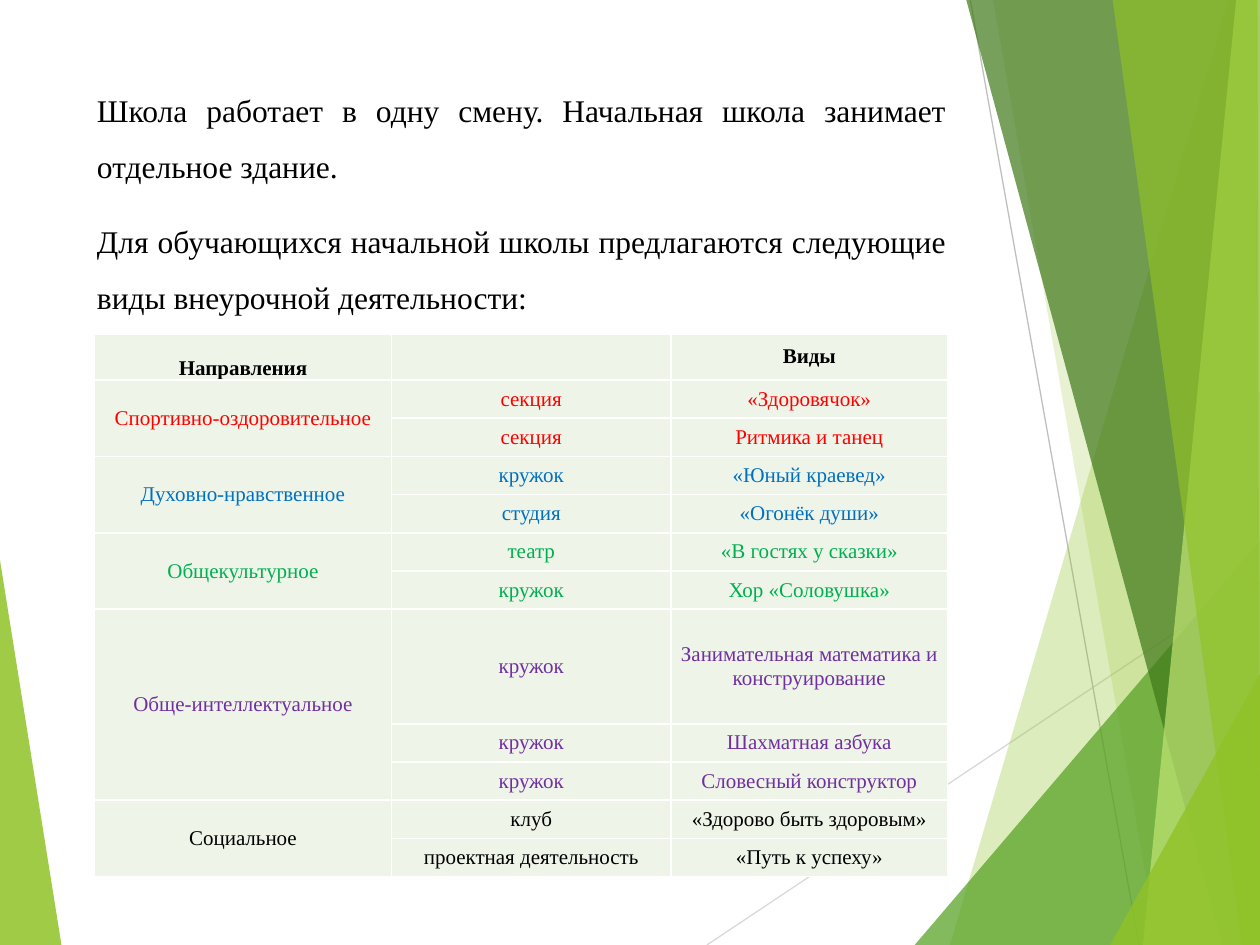
from lxml.etree import SubElement
from pptx import Presentation
from pptx.dml.color import RGBColor
from pptx.enum.shapes import MSO_CONNECTOR
from pptx.enum.text import MSO_ANCHOR, PP_ALIGN
from pptx.oxml.ns import qn
from pptx.util import Cm, Pt

FONT = "Times New Roman"
BLACK = RGBColor(0x00, 0x00, 0x00)
WHITE = RGBColor(0xFF, 0xFF, 0xFF)
RED = RGBColor(0xFF, 0x00, 0x00)
BLUE = RGBColor(0x00, 0x70, 0xC0)
GREEN = RGBColor(0x00, 0xB0, 0x50)
PURPLE = RGBColor(0x70, 0x30, 0xA0)
CELL_FILL = RGBColor(0xEE, 0xF4, 0xE8)
LIME = RGBColor(0x90, 0xC2, 0x26)
LEAF = RGBColor(0x54, 0xA0, 0x21)
FOREST = RGBColor(0x3F, 0x78, 0x19)
PALE_LIME = RGBColor(0xC0, 0xE4, 0x74)
LIGHT_GRAY = RGBColor(0xD9, 0xD9, 0xD9)
GRAY = RGBColor(0xBF, 0xBF, 0xBF)

RIGHT, BOTTOM = 25.4, 19.05
CORNERS = [(RIGHT, BOTTOM), (RIGHT, 0)]

LEFT_WEDGE = ([(0, 11.29), (1.24, BOTTOM), (0, BOTTOM)], LIME, 85)
RAYS = [
    ((14.25, BOTTOM), (RIGHT, 11.61), LIGHT_GRAY),
    ((19.56, 0), (22.96, BOTTOM), GRAY),
]
FACETS = [
    ([(24.77, 0), (19.15, BOTTOM), *CORNERS], LIME, 30),
    ([(20.02, 0), (23.34, BOTTOM), *CORNERS], LIME, 20),
    ([(18.44, BOTTOM), (RIGHT, 10.9), (RIGHT, BOTTOM)], LEAF, 72),
    ([(19.48, 0), (24.64, BOTTOM), *CORNERS], FOREST, 70),
    ([(24.92, 0), (23.04, BOTTOM), *CORNERS], PALE_LIME, 70),
    ([(22.43, 0), (25.04, BOTTOM), (RIGHT, BOTTOM), (25.35, 0)], LIME, 65),
    ([(22.38, BOTTOM), (RIGHT, 13.59), (RIGHT, BOTTOM)], LIME, 80),
]

INTRODUCTION = [
    "Школа работает в одну смену. Начальная школа занимает отдельное здание.",
    "Для обучающихся начальной школы предлагаются следующие виды внеурочной деятельности:",
]
HEADERS = ["Направления", "", "Виды"]
DIRECTIONS = [
    ("Спортивно-оздоровительное", RED,
     [("секция", "«Здоровячок»"), ("секция", "Ритмика и танец")]),
    ("Духовно-нравственное", BLUE,
     [("кружок", "«Юный краевед»"), ("студия", "«Огонёк души»")]),
    ("Общекультурное", GREEN,
     [("театр", "«В гостях у сказки»"), ("кружок", "Хор «Соловушка»")]),
    ("Обще-интеллектуальное", PURPLE,
     [("кружок", "Занимательная математика и конструирование"),
      ("кружок", "Шахматная азбука"), ("кружок", "Словесный конструктор")]),
    ("Социальное", BLACK,
     [("клуб", "«Здорово быть здоровым»"),
      ("проектная деятельность", "«Путь к успеху»")]),
]
COLUMN_WIDTHS = [5.98, 5.64, 5.57]
HEADER_HEIGHT, ROW_HEIGHT, TALL_HEIGHT = 0.93, 0.77, 2.31
TALL_ROW = 7


def add_facet(slide, points, color, opacity):
    """Draw a translucent polygon through points given in centimetres."""
    start, *others = [(Cm(x), Cm(y)) for x, y in points]
    builder = slide.shapes.build_freeform(*start)
    builder.add_line_segments(others, close=True)
    shape = builder.convert_to_shape()
    shape.shadow.inherit = False
    shape.line.fill.background()
    shape.fill.solid()
    shape.fill.fore_color.rgb = color
    color_element = shape.fill._xPr.find(qn("a:solidFill"))[0]
    SubElement(color_element, qn("a:alpha"), val=str(opacity * 1000))


def add_ray(slide, start, end, color):
    """Draw a thin straight line between two points in centimetres."""
    ends = [Cm(length) for length in (*start, *end)]
    connector = slide.shapes.add_connector(MSO_CONNECTOR.STRAIGHT, *ends)
    connector.line.color.rgb = color
    connector.line.width = Pt(0.75)
    SubElement(connector._element.spPr, qn("a:effectLst"))


def add_run(paragraph, text, size, color, bold=False):
    """Append one formatted run to a paragraph."""
    run = paragraph.add_run()
    run.text = text
    run.font.name = FONT
    run.font.size = Pt(size)
    run.font.bold = bold
    run.font.color.rgb = color


def fill_introduction(body):
    """Place the body placeholder and write its justified paragraphs."""
    body.left, body.top, body.width, body.height = Cm(1.7), Cm(1.32), Cm(17.63), Cm(15.47)
    frame = body.text_frame
    for index, text in enumerate(INTRODUCTION):
        paragraph = frame.add_paragraph() if index else frame.paragraphs[0]
        paragraph.alignment = PP_ALIGN.JUSTIFY
        paragraph.line_spacing = 1.5
        paragraph.space_before = Pt(10)
        properties = paragraph._p.get_or_add_pPr()
        properties.set("marL", "0")
        properties.set("indent", "0")
        SubElement(properties, qn("a:buNone"))
        add_run(paragraph, text, 18, BLACK)


def style_cell(cell):
    """Give a cell white borders, a pale fill and tight margins."""
    properties = cell._tc.get_or_add_tcPr()
    for side in ("lnL", "lnR", "lnT", "lnB"):
        border = SubElement(properties, qn(f"a:{side}"), w=str(Pt(1)))
        fill = SubElement(border, qn("a:solidFill"))
        SubElement(fill, qn("a:srgbClr"), val=str(WHITE))
    cell.fill.solid()
    cell.fill.fore_color.rgb = CELL_FILL
    cell.margin_left = cell.margin_right = Cm(0.18)
    cell.margin_top = cell.margin_bottom = 0
    cell.vertical_anchor = MSO_ANCHOR.MIDDLE


def write_cell(cell, text, color, bold=False):
    """Write centred text into a cell."""
    paragraph = cell.text_frame.paragraphs[0]
    paragraph.alignment = PP_ALIGN.CENTER
    if text:
        add_run(paragraph, text, 12, color, bold)


def add_activity_table(slide):
    """Build the table of directions and their activities."""
    row_count = 1 + sum(len(activities) for _, _, activities in DIRECTIONS)
    heights = [HEADER_HEIGHT] + [ROW_HEIGHT] * (row_count - 1)
    heights[TALL_ROW] = TALL_HEIGHT
    table = slide.shapes.add_table(
        row_count, len(HEADERS), Cm(1.91), Cm(6.73),
        Cm(sum(COLUMN_WIDTHS)), Cm(sum(heights))).table
    for column, width in zip(table.columns, COLUMN_WIDTHS):
        column.width = Cm(width)
    for row, height in zip(table.rows, heights):
        row.height = Cm(height)
    for cell in table.iter_cells():
        style_cell(cell)
    for column, header in enumerate(HEADERS):
        write_cell(table.cell(0, column), header, BLACK, bold=True)
    table.cell(0, 0).vertical_anchor = MSO_ANCHOR.BOTTOM
    row = 1
    for direction, color, activities in DIRECTIONS:
        first = table.cell(row, 0)
        first.merge(table.cell(row + len(activities) - 1, 0))
        write_cell(first, direction, color)
        for form, title in activities:
            write_cell(table.cell(row, 1), form, color)
            write_cell(table.cell(row, 2), title, color)
            row += 1


def main():
    """Build and save the presentation."""
    presentation = Presentation()
    presentation.slide_width, presentation.slide_height = Cm(RIGHT), Cm(BOTTOM)
    slide = presentation.slides.add_slide(presentation.slide_layouts[1])
    title = slide.shapes.title._element
    title.getparent().remove(title)
    add_facet(slide, *LEFT_WEDGE)
    for ray in RAYS:
        add_ray(slide, *ray)
    for facet in FACETS:
        add_facet(slide, *facet)
    fill_introduction(slide.placeholders[1])
    add_activity_table(slide)
    presentation.save("out.pptx")


if __name__ == "__main__":
    main()
